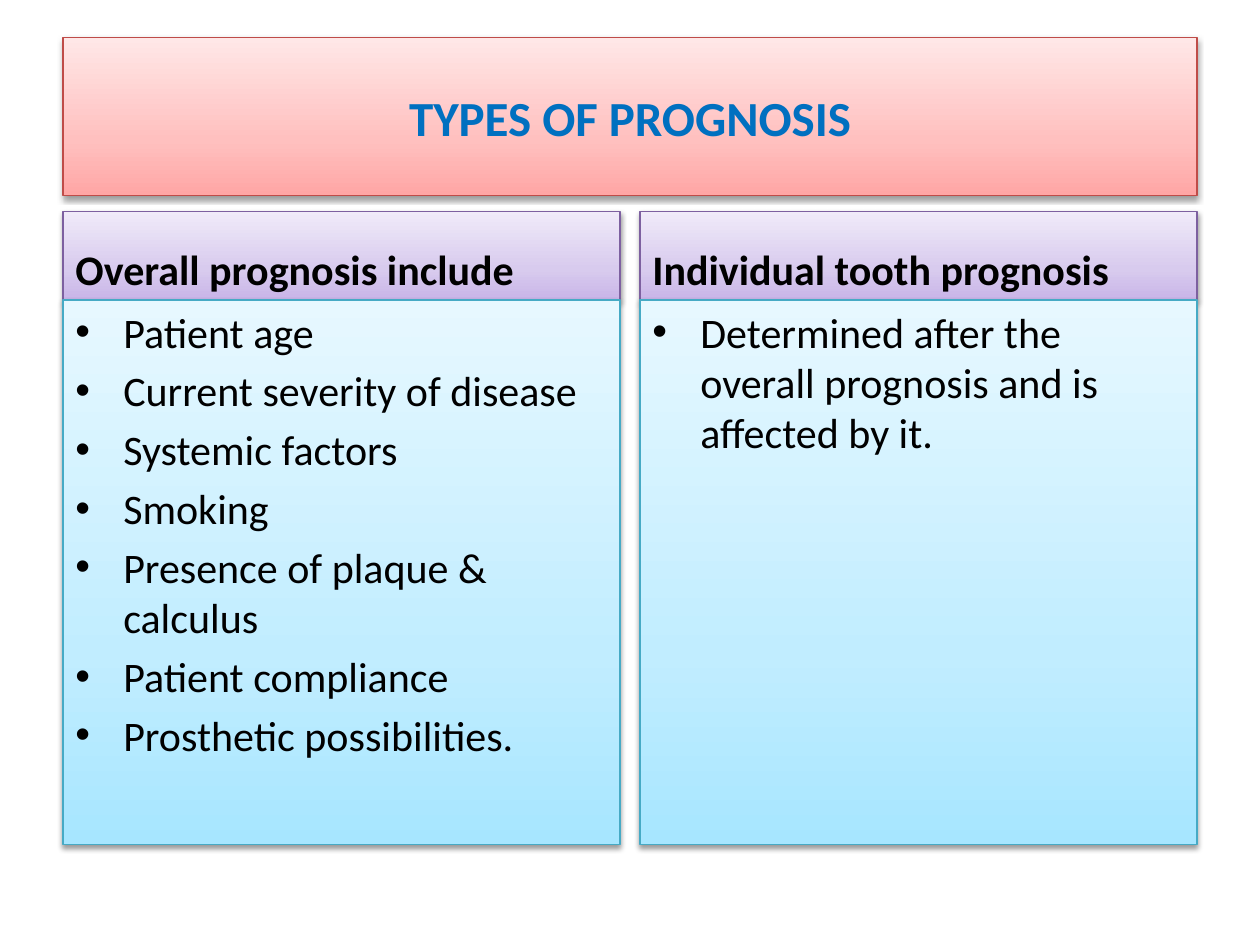
from lxml import etree
from pptx import Presentation, util as u
from pptx.dml.color import RGBColor
from pptx.enum import shapes, text
from pptx.oxml import parse_xml
from pptx.oxml.ns import qn

TITLE = "TYPES OF PROGNOSIS"
COLS = [
    ("Overall prognosis include", [
        "Patient age",
        "Current severity of disease",
        "Systemic factors",
        "Smoking",
        "Presence of plaque & calculus",
        "Patient compliance",
        "Prosthetic possibilities.",
    ]),
    ("Individual tooth prognosis", [
        "Determined after the overall prognosis and is affected by it.",
    ]),
]

BLACK = RGBColor(0, 0, 0)
BLUE = RGBColor(0x00, 0x70, 0xC0)
RED = RGBColor(0xBF, 0x4C, 0x48), ("FFA6A5", "FFC0BF", "FFE7E7")
PURPLE = RGBColor(0x7D, 0x60, 0xA0), ("C9B5E8", "D8CBEE", "F0EAF9")
AQUA = RGBColor(0x46, 0xAA, 0xC5), ("A7E6FF", "C1EDFF", "E7F8FF")
STOPS = (0, 35, 100)
NS = 'xmlns:a="http://schemas.openxmlformats.org/drawingml/2006/main"'

LEFT, WIDE, GAP = 0.5, 9, 0.16
HEAD_TOP, HEAD_H, LIST_H = 1.68, 0.7, 4.32
COL_W = (WIDE - GAP) / 2

HEAD = dict(name="Calibri", size=u.Pt(24), bold=True)
ITEM = dict(HEAD, bold=False)
MAIN = dict(HEAD, size=u.Pt(28))


def place(shape, box, theme):
    for key, val in zip(("left", "top", "width", "height"), box):
        setattr(shape, key, u.Inches(val))
    line, tints = theme
    stops = "".join(
        f'<a:gs pos="{pos * 1000}"><a:srgbClr val="{tint}"/></a:gs>'
        for pos, tint in zip(STOPS, tints))
    shape._element.spPr.append(parse_xml(
        f'<a:gradFill {NS} rotWithShape="1"><a:gsLst>{stops}</a:gsLst>'
        '<a:lin ang="16200000" scaled="0"/></a:gradFill>'))
    shape.line.color.rgb = line
    shape.line.width = u.Pt(0.75)
    shape.shadow.inherit = False
    shape._element.spPr.find(qn("a:effectLst")).append(parse_xml(
        f'<a:outerShdw {NS} blurRad="40000" dist="20000" dir="5400000" '
        'rotWithShape="0"><a:srgbClr val="000000"><a:alpha val="38000"/>'
        '</a:srgbClr></a:outerShdw>'))


def write(shape, lines, style, color, anchor, align, bullet=False):
    frame = shape.text_frame
    frame.word_wrap = True
    frame.vertical_anchor = anchor
    frame.text = "\n".join(lines)
    for i, para in enumerate(frame.paragraphs):
        para.alignment = align
        para.space_before = u.Pt(4.8 if i else 0)
        if bullet:
            props = para._p.get_or_add_pPr()
            props.set("marL", str(u.Inches(0.38)))
            props.set("indent", str(u.Inches(-0.38)))
            etree.SubElement(props, qn("a:buFont"), typeface="Arial")
            etree.SubElement(props, qn("a:buChar"), char="•")
        font = para.runs[0].font
        for key, val in style.items():
            setattr(font, key, val)
        font.color.rgb = color


def panel(slide, box, theme):
    shape = slide.shapes.add_shape(
        shapes.MSO_SHAPE.RECTANGLE, *map(u.Inches, box))
    place(shape, box, theme)
    return shape


def main():
    deck = Presentation()
    deck.slide_width, deck.slide_height = u.Inches(10), u.Inches(7.5)
    slide = deck.slides.add_slide(deck.slide_layouts[5])
    mid, low, top = (text.MSO_ANCHOR.MIDDLE, text.MSO_ANCHOR.BOTTOM,
                     text.MSO_ANCHOR.TOP)
    title = slide.shapes.title
    place(title, (LEFT, 0.3, WIDE, 1.25), RED)
    write(title, [TITLE], MAIN, BLUE, mid, text.PP_ALIGN.CENTER)
    for i, (head, items) in enumerate(COLS):
        x = LEFT + i * (COL_W + GAP)
        bar = panel(slide, (x, HEAD_TOP, COL_W, HEAD_H), PURPLE)
        write(bar, [head], HEAD, BLACK, low, text.PP_ALIGN.LEFT)
        body = panel(slide, (x, HEAD_TOP + HEAD_H, COL_W, LIST_H), AQUA)
        write(body, items, ITEM, BLACK, top, text.PP_ALIGN.LEFT, True)
    deck.save("out.pptx")


if __name__ == "__main__":
    main()
